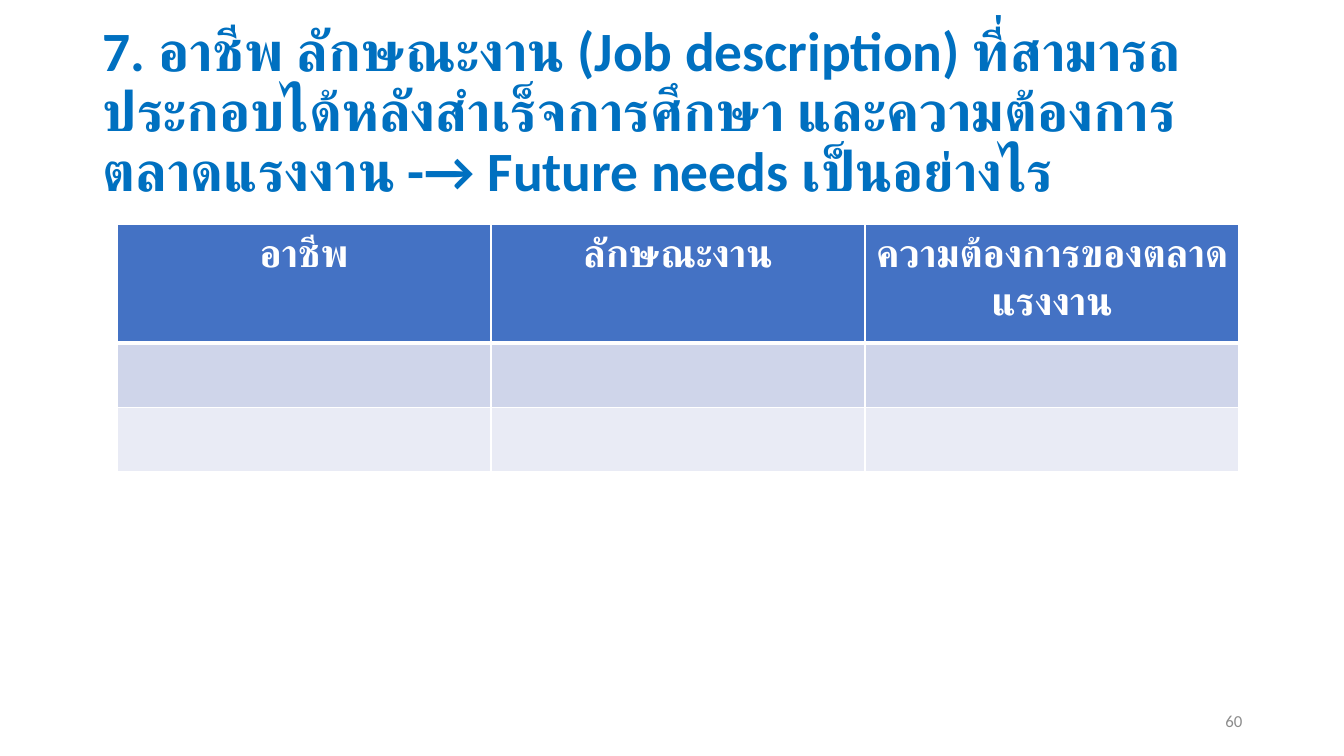
"""Build the slide on careers, job descriptions and labour market needs."""
import pptx
import pptx.dml.color
import pptx.enum.lang
import pptx.enum.text
import pptx.oxml
import pptx.oxml.ns
import pptx.util

TITLE = (
    "7. อาชีพ ลักษณะงาน (Job description) ที่สามารถประกอบได้หลังสำเร็จการศึกษา "
    "และความต้องการตลาดแรงงาน -→ Future needs เป็นอย่างไร"
)
HEADINGS = ["อาชีพ", "ลักษณะงาน", "ความต้องการของตลาดแรงงาน"]
PAGE_NUMBER = "60"

RGB = pptx.dml.color.RGBColor
WHITE = RGB(0xFF, 0xFF, 0xFF)
TITLE_BLUE = RGB(0x00, 0x70, 0xC0)
NUMBER_GREY = RGB(0x8C, 0x8C, 0x8C)
ROW_FILLS = [RGB(0x44, 0x72, 0xC4), RGB(0xCF, 0xD5, 0xEA), RGB(0xE9, 0xEB, 0xF5)]

ALIGN = pptx.enum.text.PP_ALIGN
MIDDLE = pptx.enum.text.MSO_ANCHOR.MIDDLE
THAI = pptx.enum.lang.MSO_LANGUAGE_ID.THAI
INCH = pptx.util.Inches

SLIDE_SIZE = (13.33, 7.5)
TITLE_BOX = (0.92, 0.4, 11.5, 1.45)
NUMBER_BOX = (9.42, 6.95, 3, 0.4)
TABLE_BOX = (1.16, 2.23, 11.13, 2.46)
ROW_HEIGHTS = [1.17, 0.64, 0.64]
THIN, THICK = 1, 3

TITLE_FORMAT = {"size": pptx.util.Pt(39.6), "bold": True, "language_id": THAI}
HEADING_FORMAT = {"size": pptx.util.Pt(28), "bold": True, "language_id": THAI}
NUMBER_FORMAT = {"size": pptx.util.Pt(12)}


def write(frame, text, alignment, color, formats):
    """Put one formatted run of text in a frame and return its paragraph."""
    para = frame.paragraphs[0]
    para.alignment = alignment
    span = para.add_run()
    span.text = text
    for name, value in formats.items():
        setattr(span.font, name, value)
    span.font.color.rgb = color
    span.font.name = "Calibri"
    script_font = pptx.oxml.parse_xml(
        f'<a:cs {pptx.oxml.ns.nsdecls("a")} typeface="Calibri"/>'
    )
    span.font._element.append(script_font)
    return para


def set_borders(cell, widths):
    """Draw white cell borders with the given widths in points."""
    properties = cell._tc.get_or_add_tcPr()
    for side, width in widths.items():
        properties.append(pptx.oxml.parse_xml(
            f'<a:ln{side} {pptx.oxml.ns.nsdecls("a")} w="{pptx.util.Pt(width)}">'
            f'<a:solidFill><a:srgbClr val="{WHITE}"/></a:solidFill></a:ln{side}>'
        ))


def add_title(page):
    """Place the heading in the title placeholder."""
    title = page.shapes.title
    for name, value in zip(("left", "top", "width", "height"), TITLE_BOX):
        setattr(title, name, INCH(value))
    frame = title.text_frame
    frame.word_wrap = True
    frame.auto_size = pptx.enum.text.MSO_AUTO_SIZE.NONE
    frame.vertical_anchor = MIDDLE
    para = write(frame, TITLE, ALIGN.LEFT, TITLE_BLUE, TITLE_FORMAT)
    para.line_spacing = 0.9


def add_career_table(page):
    """Add the table with its heading row and two empty rows."""
    table = page.shapes.add_table(
        len(ROW_HEIGHTS), len(HEADINGS), *map(INCH, TABLE_BOX)
    ).table
    for column in table.columns:
        column.width = INCH(TABLE_BOX[2] / len(HEADINGS))
    for index, (height, fill) in enumerate(zip(ROW_HEIGHTS, ROW_FILLS)):
        row = table.rows[index]
        row.height = INCH(height)
        top = THICK if index == 1 else THIN
        bottom = THICK if index == 0 else THIN
        for cell in row.cells:
            set_borders(cell, {"L": THIN, "R": THIN, "T": top, "B": bottom})
            cell.fill.solid()
            cell.fill.fore_color.rgb = fill
    for cell, heading in zip(table.rows[0].cells, HEADINGS):
        write(cell.text_frame, heading, ALIGN.CENTER, WHITE, HEADING_FORMAT)


def add_page_number(page):
    """Add the page number at the lower right."""
    frame = page.shapes.add_textbox(*map(INCH, NUMBER_BOX)).text_frame
    frame.word_wrap = True
    frame.vertical_anchor = MIDDLE
    write(frame, PAGE_NUMBER, ALIGN.RIGHT, NUMBER_GREY, NUMBER_FORMAT)


def main():
    """Build and save the deck."""
    deck = pptx.Presentation()
    deck.slide_width, deck.slide_height = map(INCH, SLIDE_SIZE)
    page = deck.slides.add_slide(deck.slide_layouts.get_by_name("Title Only"))
    add_title(page)
    add_page_number(page)
    add_career_table(page)
    deck.save("out.pptx")


if __name__ == "__main__":
    main()
